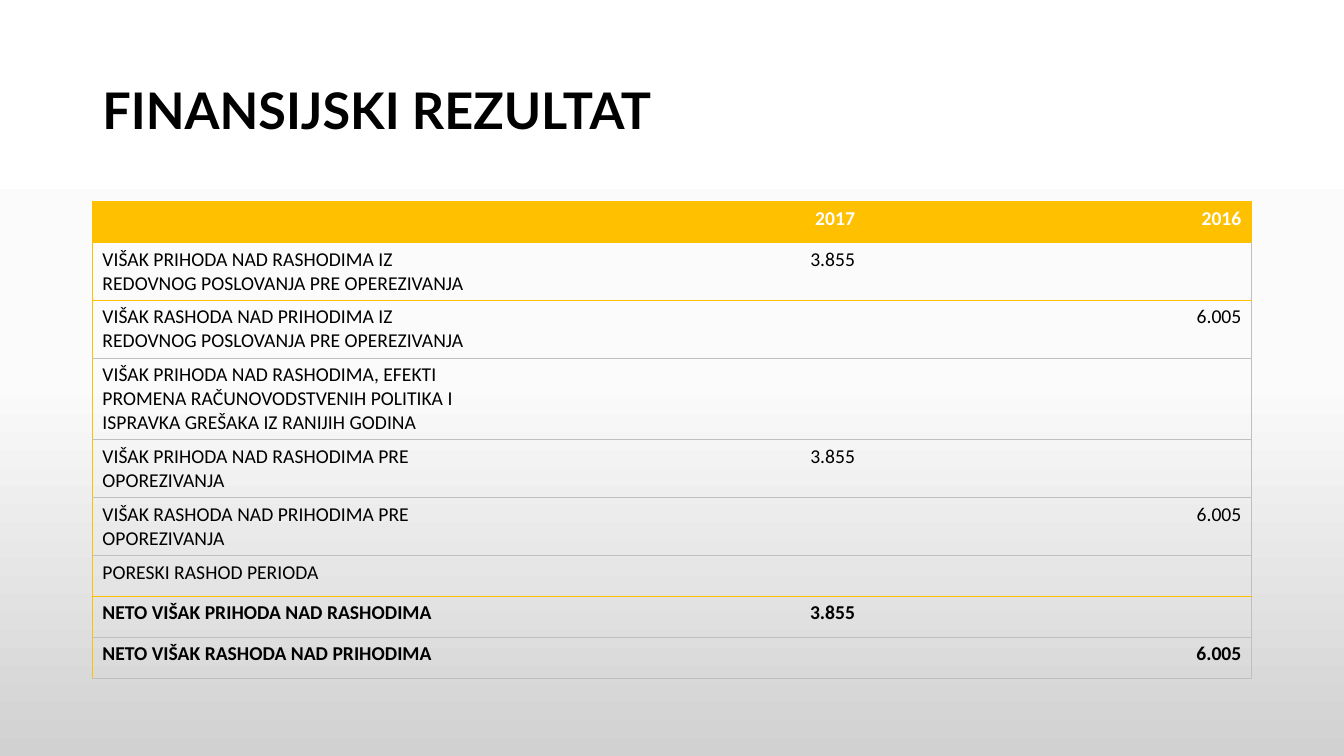
from copy import deepcopy
from lxml import etree
from pptx import Presentation
from pptx.dml import color
from pptx.enum import text
from pptx.oxml import ns
from pptx.util import Pt

HUES = {"gold": "FFC000", "grey": "BFBFBF", "black": "000000", "white": "FFFFFF",
        "mist": "FBFBFB", "ash": "D1D1D1"}
ROWS = [
    ("", "2017", "2016"),
    ("VIŠAK PRIHODA NAD RASHODIMA IZ REDOVNOG POSLOVANJA PRE OPEREZIVANJA", "3.855", ""),
    ("VIŠAK RASHODA NAD PRIHODIMA IZ REDOVNOG POSLOVANJA PRE OPEREZIVANJA", "", "6.005"),
    ("VIŠAK PRIHODA NAD RASHODIMA, EFEKTI PROMENA RAČUNOVODSTVENIH POLITIKA I "
     "ISPRAVKA GREŠAKA IZ RANIJIH GODINA", "", ""),
    ("VIŠAK PRIHODA NAD RASHODIMA PRE OPOREZIVANJA", "3.855", ""),
    ("VIŠAK RASHODA NAD PRIHODIMA PRE OPOREZIVANJA", "", "6.005"),
    ("PORESKI RASHOD PERIODA", "", ""),
    ("NETO VIŠAK PRIHODA NAD RASHODIMA", "3.855", ""),
    ("NETO VIŠAK RASHODA NAD PRIHODIMA", "", "6.005"),
]
GOLD_EDGES = (0, 1, 2, 7)


def style(run, hue, **form):
    for key, value in form.items():
        setattr(run.font, key, value)
    run.font.color.rgb = color.RGBColor.from_string(HUES[hue])


def edge(cell, spot, side, hue):
    line = etree.Element(ns.qn("a:ln" + side), w=str(Pt(0.5)))
    if hue:
        fill = etree.SubElement(line, ns.qn("a:solidFill"))
        etree.SubElement(fill, ns.qn("a:srgbClr"), val=HUES[hue])
    else:
        etree.SubElement(line, ns.qn("a:noFill"))
    cell._tc.get_or_add_tcPr().insert(spot, line)


deck = Presentation()
deck.slide_width, deck.slide_height = Pt(960), Pt(540)
slide = deck.slides.add_slide(deck.slide_layouts[5])

back = slide.background.fill
back.gradient()
back.gradient_angle = 270
stops = slide._element.find(".//" + ns.qn("a:gsLst"))
stops.append(deepcopy(stops[-1]))
for stop, (place, hue) in zip(back.gradient_stops, [(0, "white"), (0.5, "mist"), (1, "ash")]):
    stop.position = place
    stop.color.rgb = color.RGBColor.from_string(HUES[hue])

title = slide.shapes.title
for key, value in {"left": 66, "top": 28.8, "width": 828, "height": 104.4}.items():
    setattr(title, key, Pt(value))
frame = title.text_frame
frame.text = "FINANSIJSKI REZULTAT"
frame.auto_size = text.MSO_AUTO_SIZE.NONE
frame.vertical_anchor = text.MSO_ANCHOR.MIDDLE
head = frame.paragraphs[0]
head.alignment = text.PP_ALIGN.LEFT
head.line_spacing = 0.9
style(head.runs[0], "black", name="Lato", size=Pt(36), bold=True)

grid = slide.shapes.add_table(len(ROWS), 3, Pt(66), Pt(144), Pt(828), Pt(29.2 * len(ROWS))).table
grid.horz_banding = False
for r, row in enumerate(ROWS):
    for c, words in enumerate(row):
        cell = grid.cell(r, c)
        if r == 0:
            cell.fill.solid()
            cell.fill.fore_color.rgb = color.RGBColor.from_string(HUES["gold"])
        else:
            cell.fill.background()
        rims = {
            "L": "gold" if c == 0 else None,
            "R": None if c < 2 else "gold" if r == 0 else "grey",
            "T": "gold" if r in GOLD_EDGES else "grey",
            "B": "gold" if r + 1 in GOLD_EDGES else "grey",
        }
        for spot, (side, hue) in enumerate(rims.items()):
            edge(cell, spot, side, hue)
        if words:
            para = cell.text_frame.paragraphs[0]
            para.alignment = text.PP_ALIGN.RIGHT if c else text.PP_ALIGN.LEFT
            run = para.add_run()
            run.text = words
            style(run, "black" if r else "white", name="Calibri", size=Pt(14), bold=r in (0, 7, 8))

deck.save("out.pptx")
